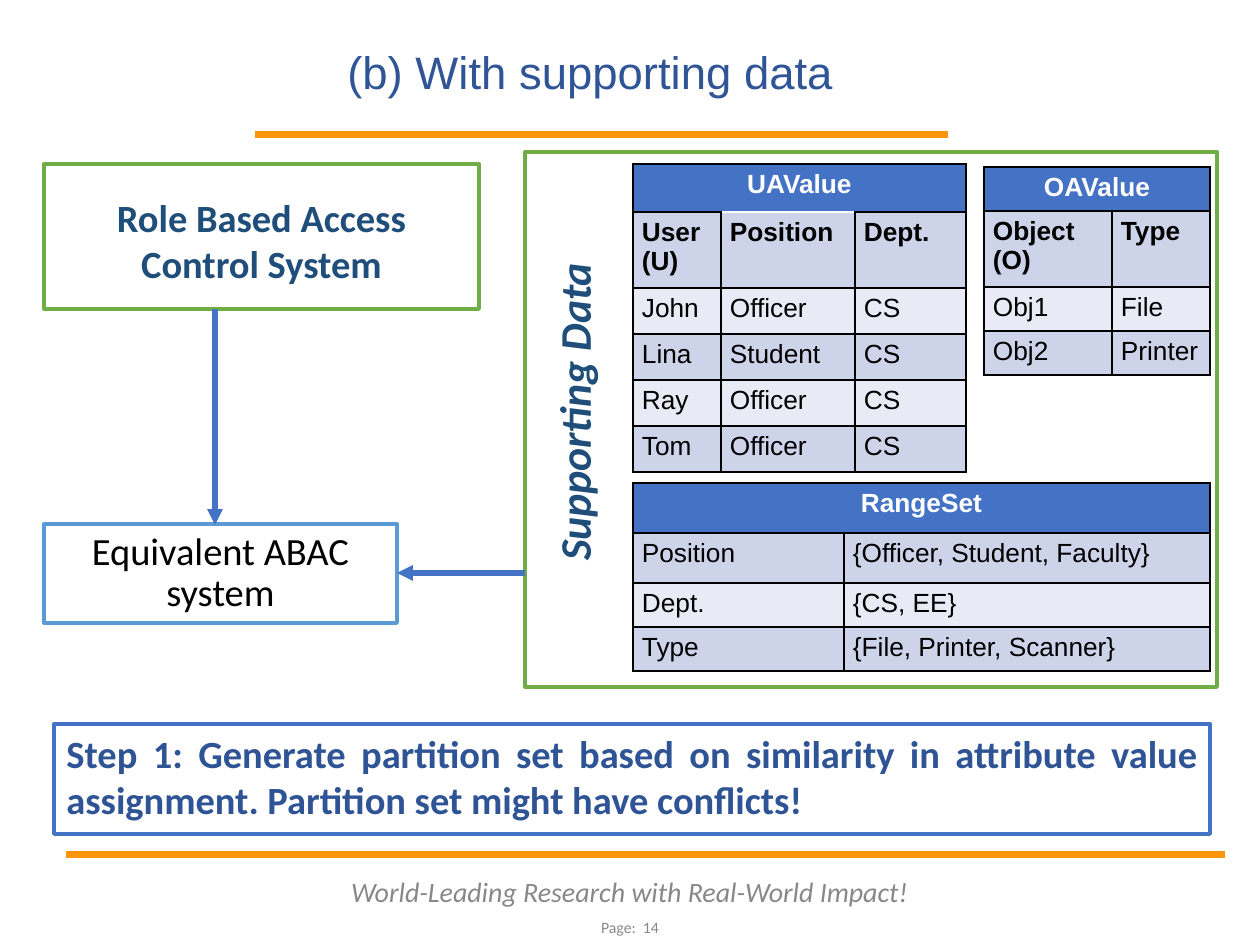
from lxml import etree
from pptx import Presentation
from pptx.dml.color import RGBColor
from pptx.enum.shapes import MSO_CONNECTOR, MSO_SHAPE
from pptx.enum.text import MSO_ANCHOR, PP_ALIGN
from pptx.oxml import parse_xml
from pptx.oxml.ns import nsdecls, qn
from pptx.util import Pt

SCALE = 914400 / 126
RECTANGLE = MSO_SHAPE.RECTANGLE
STRAIGHT = MSO_CONNECTOR.STRAIGHT
TOP, MIDDLE, BOTTOM = MSO_ANCHOR.TOP, MSO_ANCHOR.MIDDLE, MSO_ANCHOR.BOTTOM
LEFT, CENTER, JUSTIFY = PP_ALIGN.LEFT, PP_ALIGN.CENTER, PP_ALIGN.JUSTIFY

WHITE = RGBColor(0xFF, 0xFF, 0xFF)
BLACK = RGBColor(0x00, 0x00, 0x00)
ORANGE = RGBColor(0xFF, 0x95, 0x0E)
GREEN = RGBColor(0x70, 0xAD, 0x47)
BLUE = RGBColor(0x44, 0x72, 0xC4)
LIGHT_BLUE = RGBColor(0x5B, 0x9B, 0xD5)
STEP_BLUE = RGBColor(0x2F, 0x54, 0x96)
TITLE_BLUE = RGBColor(0x2F, 0x55, 0x97)
NAVY = RGBColor(0x1E, 0x4E, 0x79)
GRAY = RGBColor(0x88, 0x88, 0x88)
BANDS = [RGBColor(0xE8, 0xEB, 0xF5), RGBColor(0xCD, 0xD4, 0xEA)]


def px(value):
    return round(value * SCALE)


def format_paragraph(paragraph, color, alignment, values):
    paragraph.alignment = alignment
    for name, value in values.items():
        setattr(paragraph.font, name, value)
    paragraph.font.color.rgb = color


presentation = Presentation()
presentation.slide_width = px(1260)
presentation.slide_height = px(945)
slide = presentation.slides.add_slide(presentation.slide_layouts[6])
shapes = slide.shapes

boxes = [
    ((525, 152, 692, 535), WHITE, GREEN),
    ((44, 164, 435, 145), WHITE, GREEN),
    ((44, 524, 353, 99), WHITE, LIGHT_BLUE),
    ((54, 724, 1156, 110), None, BLUE),
]
for bounds, fill, outline in boxes:
    shape = shapes.add_shape(RECTANGLE, *map(px, bounds))
    shape.shadow.inherit = False
    if fill is None:
        shape.fill.background()
    else:
        shape.fill.solid()
        shape.fill.fore_color.rgb = fill
    shape.line.color.rgb = outline
    shape.line.width = Pt(2.25)

lines = [
    ((255, 135, 948, 135), ORANGE, 4, False),
    ((66, 855, 1225, 855), ORANGE, 4, False),
    ((525, 573, 397, 573), BLUE, 3, True),
    ((215, 309, 215, 525), BLUE, 3, True),
]
for ends, color, width, arrow in lines:
    connector = shapes.add_connector(STRAIGHT, *map(px, ends))
    connector.line.color.rgb = color
    connector.line.width = Pt(width)
    if arrow:
        outline = connector.line._get_or_add_ln()
        etree.SubElement(outline, qn("a:tailEnd"), type="triangle")
    etree.SubElement(connector._element.spPr, qn("a:effectLst"))

tables = [
    ((633, 483), (211, 366), (50, 50, 44, 44), 1, [
        ["RangeSet", ""],
        ["Position", "{Officer, Student, Faculty}"],
        ["Dept.", "{CS, EE}"],
        ["Type", "{File, Printer, Scanner}"],
    ]),
    ((633, 164), (88, 134, 111), (48, 76, 46, 46, 46, 46), 2, [
        ["UAValue", "", ""],
        ["User\n(U)", "Position", "Dept."],
        ["John", "Officer", "CS"],
        ["Lina", "Student", "CS"],
        ["Ray", "Officer", "CS"],
        ["Tom", "Officer", "CS"],
    ]),
    ((984, 167), (128, 98), (44, 76, 44, 44), 2, [
        ["OAValue", ""],
        ["Object\n(O)", "Type"],
        ["Obj1", "File"],
        ["Obj2", "Printer"],
    ]),
]
cell_margins = {"margin_left": px(9), "margin_right": px(9),
                "margin_top": px(6), "margin_bottom": px(6)}
white_edges = {("UAValue", 0, 1, "lnB"), ("UAValue", 1, 1, "lnT")}
for corner, widths, heights, bold_rows, rows in tables:
    table = shapes.add_table(len(rows), len(widths), *map(px, corner),
                             px(sum(widths)), px(sum(heights))).table
    for column, width in zip(table.columns, widths):
        column.width = px(width)
    for row, height in zip(table.rows, heights):
        row.height = px(height)
    table.cell(0, 0).merge(table.cell(0, len(widths) - 1))
    for row_index, row in enumerate(rows):
        for column_index, text in enumerate(row):
            cell = table.cell(row_index, column_index)
            cell.text = text
            for name, value in cell_margins.items():
                setattr(cell, name, value)
            header = row_index == 0
            values = {"name": "Arial", "size": Pt(15), "bold": row_index < bold_rows}
            for paragraph in cell.text_frame.paragraphs:
                format_paragraph(paragraph, WHITE if header else BLACK,
                                 CENTER if header else LEFT, values)
            properties = cell._tc.get_or_add_tcPr()
            for side in ("lnL", "lnR", "lnT", "lnB"):
                edge = (rows[0][0], row_index, column_index, side)
                color = WHITE if edge in white_edges else BLACK
                properties.append(parse_xml(
                    f'<a:{side} {nsdecls("a")} w="12192"><a:solidFill>'
                    f'<a:srgbClr val="{color}"/></a:solidFill></a:{side}>'))
            cell.fill.solid()
            cell.fill.fore_color.rgb = BLUE if header else BANDS[row_index % 2]

texts = [
    ((251, 43, 679, 63), "(b) With supporting data", TITLE_BLUE, CENTER, BOTTOM, 0.9, 0,
     {"name": "Arial", "size": Pt(26)}),
    ((54, 188, 415, 106), "Role Based Access Control System", NAVY, CENTER, TOP, 1, 0,
     {"name": "Calibri", "size": Pt(22), "bold": True}),
    ((314, 379, 520, 66), "Supporting Data", NAVY, CENTER, TOP, 1, 270,
     {"name": "Calibri", "size": Pt(25), "bold": True, "italic": True}),
    ((44, 524, 353, 99), "Equivalent ABAC system", BLACK, CENTER, MIDDLE, 0.9, 0,
     {"name": "Calibri", "size": Pt(22)}),
    ((54, 724, 1156, 110),
     "Step 1: Generate partition set based on similarity in attribute value "
     "assignment. Partition set might have conflicts!", STEP_BLUE, JUSTIFY, TOP, 1, 0,
     {"name": "Calibri", "size": Pt(22), "bold": True}),
    ((325, 868, 609, 46), "World-Leading Research with Real-World Impact!", GRAY, CENTER,
     MIDDLE, 1, 0, {"name": "Calibri", "size": Pt(16), "italic": True}),
    ((512, 904, 236, 46), "Page:  14", GRAY, CENTER, MIDDLE, 1, 0,
     {"name": "Calibri", "size": Pt(9)}),
]
for bounds, text, color, alignment, anchor, spacing, rotation, values in texts:
    box = shapes.add_textbox(*map(px, bounds))
    box.rotation = rotation
    frame = box.text_frame
    frame.word_wrap = True
    frame.vertical_anchor = anchor
    frame.text = text
    frame.paragraphs[0].line_spacing = spacing
    format_paragraph(frame.paragraphs[0], color, alignment, values)

presentation.save("out.pptx")
